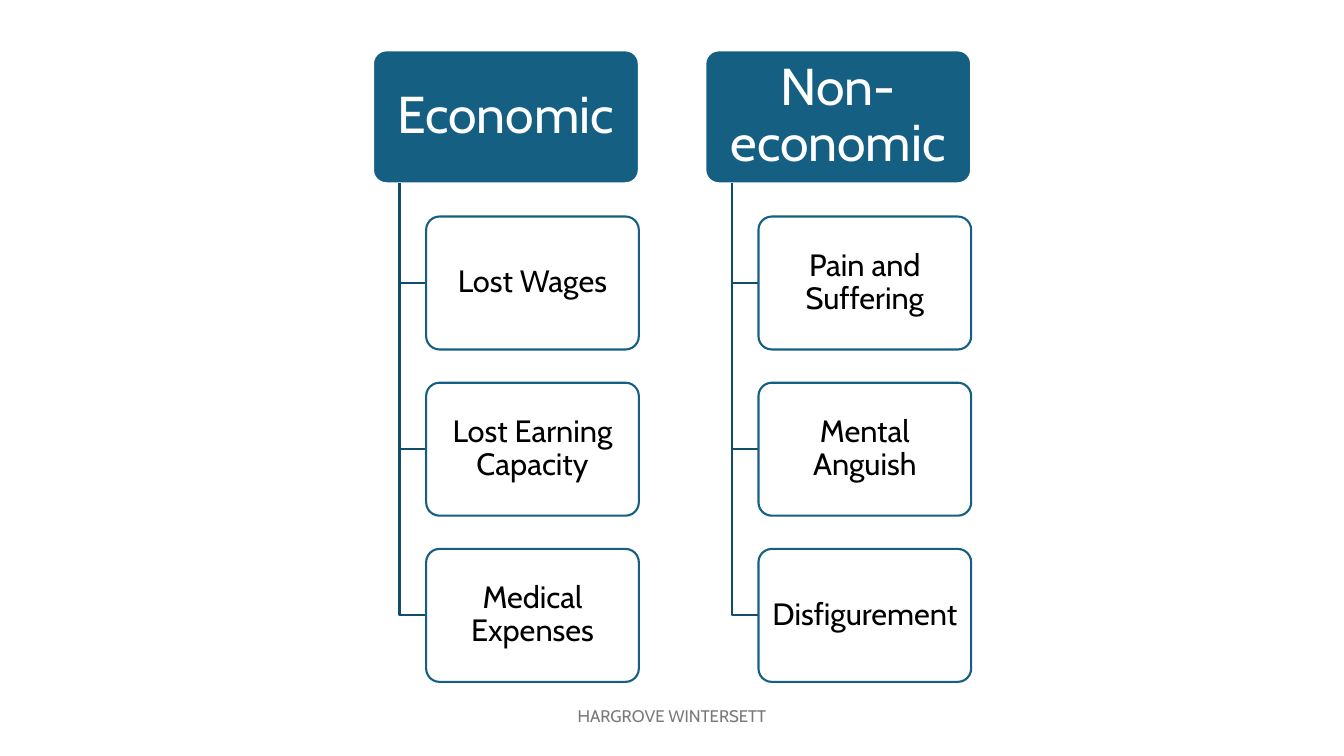
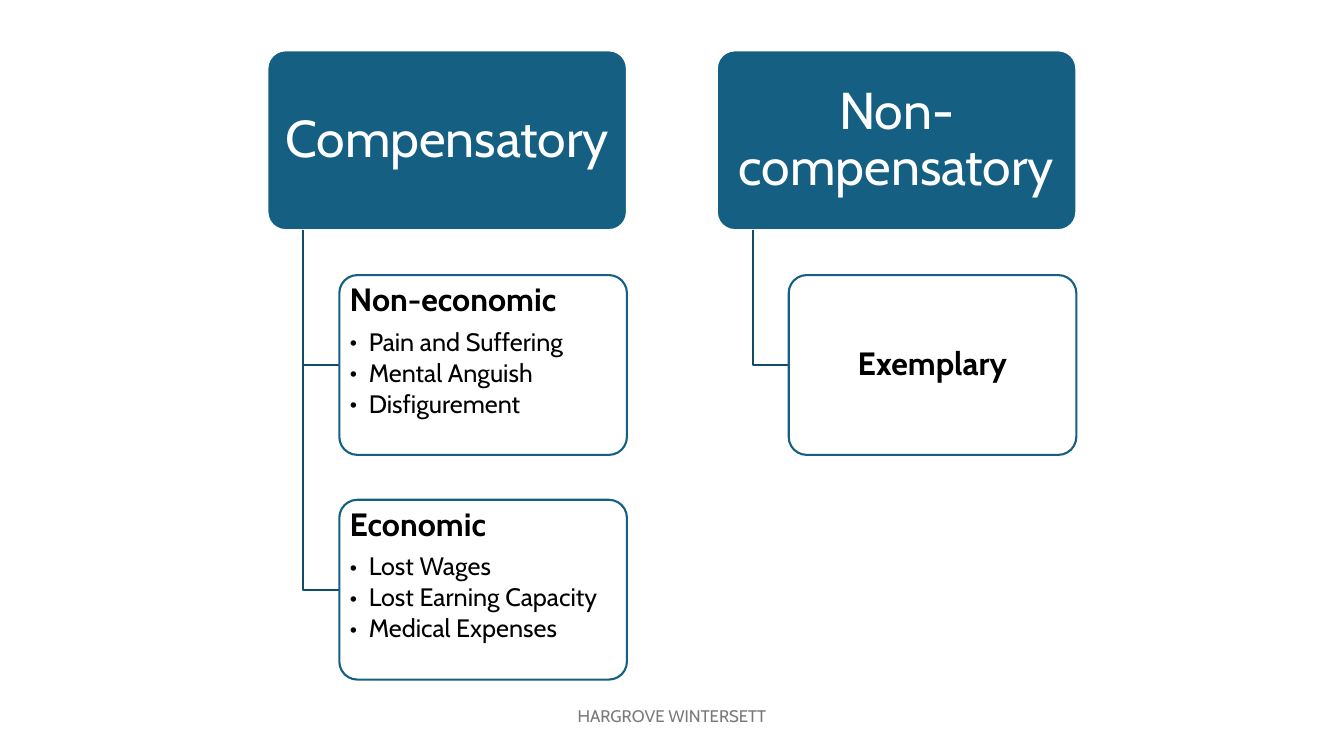
"""Build two slides that chart the kinds of damages as hanging trees."""
from dataclasses import dataclass

from lxml import etree
from pptx import Presentation
from pptx import util as u
from pptx.dml import color
from pptx.enum import shapes, text
from pptx.oxml import ns

COLORS = {
    "header": "156082",
    "branch": "114D68",
    "paper": "FFFFFF",
    "ink": "000000",
    "footer": "797979",
}
FONT = "Cabin"
FOOTER = "HARGROVE WINTERSETT"
LINE_WIDTH = u.Pt(1.5)
LEFT, CENTER = text.PP_ALIGN.LEFT, text.PP_ALIGN.CENTER

HEADER_WIDTH = 2
CHILD_WIDTH = 1.6
TRUNK_OFFSET = 0.2
CHILD_OFFSET = 0.4
ROW_PITCH = 1.25
COLUMN_PITCH = 2.5


@dataclass(frozen=True)
class Child:
    title: str
    bullets: tuple[str, ...] = ()


@dataclass(frozen=True)
class Column:
    title: str
    children: tuple[Child, ...]


@dataclass(frozen=True)
class Tree:
    left: float
    top: float
    unit: float
    child_size: float
    child_bold: bool
    columns: tuple[Column, ...]


TREES = (
    Tree(9.4, 1.27, 3.35, 22, False, (
        Column("Economic", (
            Child("Lost Wages"),
            Child("Lost Earning Capacity"),
            Child("Medical Expenses"),
        )),
        Column("Non-economic", (
            Child("Pain and Suffering"),
            Child("Mental Anguish"),
            Child("Disfigurement"),
        )),
    )),
    Tree(6.74, 1.27, 4.53, 23, True, (
        Column("Compensatory", (
            Child("Non-economic", ("Pain and Suffering", "Mental Anguish", "Disfigurement")),
            Child("Economic", ("Lost Wages", "Lost Earning Capacity", "Medical Expenses")),
        )),
        Column("Non-compensatory", (Child("Exemplary"),)),
    )),
)


def rgb(name: str) -> color.RGBColor:
    return color.RGBColor.from_string(COLORS[name])


def write(frame, words: str, *, size: float, ink: str = "ink", bold: bool = False,
          align=CENTER, spacing: float = 0.9, after: float = 0, bullet: bool = False) -> None:
    para = frame.paragraphs[0]
    if para.runs:
        para = frame.add_paragraph()
    para.alignment = align
    para.line_spacing = spacing
    para.space_after = u.Pt(after)
    span = para.add_run()
    span.text = words
    span.font.name = FONT
    span.font.size = u.Pt(size)
    span.font.bold = bold
    span.font.color.rgb = rgb(ink)
    if bullet:
        para.level = 1
        properties = para._p.get_or_add_pPr()
        indent = u.Cm(0.48)
        properties.set("marL", str(indent))
        properties.set("indent", str(-indent))
        etree.SubElement(properties, ns.qn("a:buFont"), typeface=FONT)
        etree.SubElement(properties, ns.qn("a:buChar"), char="•")


def add_box(page, left: float, top: float, width: float, height: float, *,
            fill: str, line: str, inset_x: float, inset_y: float):
    box = page.shapes.add_shape(shapes.MSO_SHAPE.ROUNDED_RECTANGLE,
                                u.Cm(left), u.Cm(top), u.Cm(width), u.Cm(height))
    box.shadow.inherit = False
    box.adjustments[0] = 0.1
    box.fill.solid()
    box.fill.fore_color.rgb = rgb(fill)
    box.line.color.rgb = rgb(line)
    box.line.width = LINE_WIDTH
    frame = box.text_frame
    frame.word_wrap = True
    frame.vertical_anchor = text.MSO_ANCHOR.MIDDLE
    frame.margin_left = frame.margin_right = u.Cm(inset_x)
    frame.margin_top = frame.margin_bottom = u.Cm(inset_y)
    return box


def add_elbow(page, left: float, top: float, right: float, bottom: float) -> None:
    builder = page.shapes.build_freeform(u.Cm(left), u.Cm(top))
    corners = ((u.Cm(left), u.Cm(bottom)), (u.Cm(right), u.Cm(bottom)))
    builder.add_line_segments(corners, close=False)
    elbow = builder.convert_to_shape()
    elbow.shadow.inherit = False
    elbow.fill.background()
    elbow.line.color.rgb = rgb("branch")
    elbow.line.width = LINE_WIDTH


def add_child(page, tree: Tree, child: Child, left: float, top: float) -> None:
    box = add_box(page, left, top, CHILD_WIDTH * tree.unit, tree.unit,
                  fill="paper", line="header", inset_x=0.13, inset_y=0.08)
    frame = box.text_frame
    if child.bullets:
        frame.vertical_anchor = text.MSO_ANCHOR.TOP
    write(frame, child.title, size=tree.child_size, bold=tree.child_bold,
          align=LEFT if child.bullets else CENTER, after=8 if child.bullets else 0)
    for bullet in child.bullets:
        write(frame, bullet, size=18, align=LEFT, after=2.7, bullet=True)


def add_column(page, tree: Tree, column: Column, left: float) -> None:
    unit = tree.unit
    trunk = left + TRUNK_OFFSET * unit
    child_left = left + CHILD_OFFSET * unit
    header = add_box(page, left, tree.top, HEADER_WIDTH * unit, unit,
                     fill="header", line="paper", inset_x=0.2, inset_y=0.13)
    write(header.text_frame, column.title, size=37, ink="paper")
    for row, child in enumerate(column.children, start=1):
        top = tree.top + row * ROW_PITCH * unit
        add_elbow(page, trunk, tree.top + unit, child_left, top + unit / 2)
        add_child(page, tree, child, child_left, top)


def add_footer(page) -> None:
    box = page.shapes.add_textbox(u.Cm(11.22), u.Cm(17.65), u.Cm(11.43), u.Cm(1.02))
    box.text_frame.word_wrap = True
    write(box.text_frame, FOOTER, size=12, ink="footer", spacing=1.0)


def add_page(deck, tree: Tree) -> None:
    page = deck.slides.add_slide(deck.slide_layouts[6])
    for index, column in enumerate(tree.columns):
        add_column(page, tree, column, tree.left + index * COLUMN_PITCH * tree.unit)
    add_footer(page)


def main() -> None:
    deck = Presentation()
    deck.slide_width, deck.slide_height = u.Cm(33.87), u.Cm(19.05)
    for tree in TREES:
        add_page(deck, tree)
    deck.save("out.pptx")


if __name__ == "__main__":
    main()
